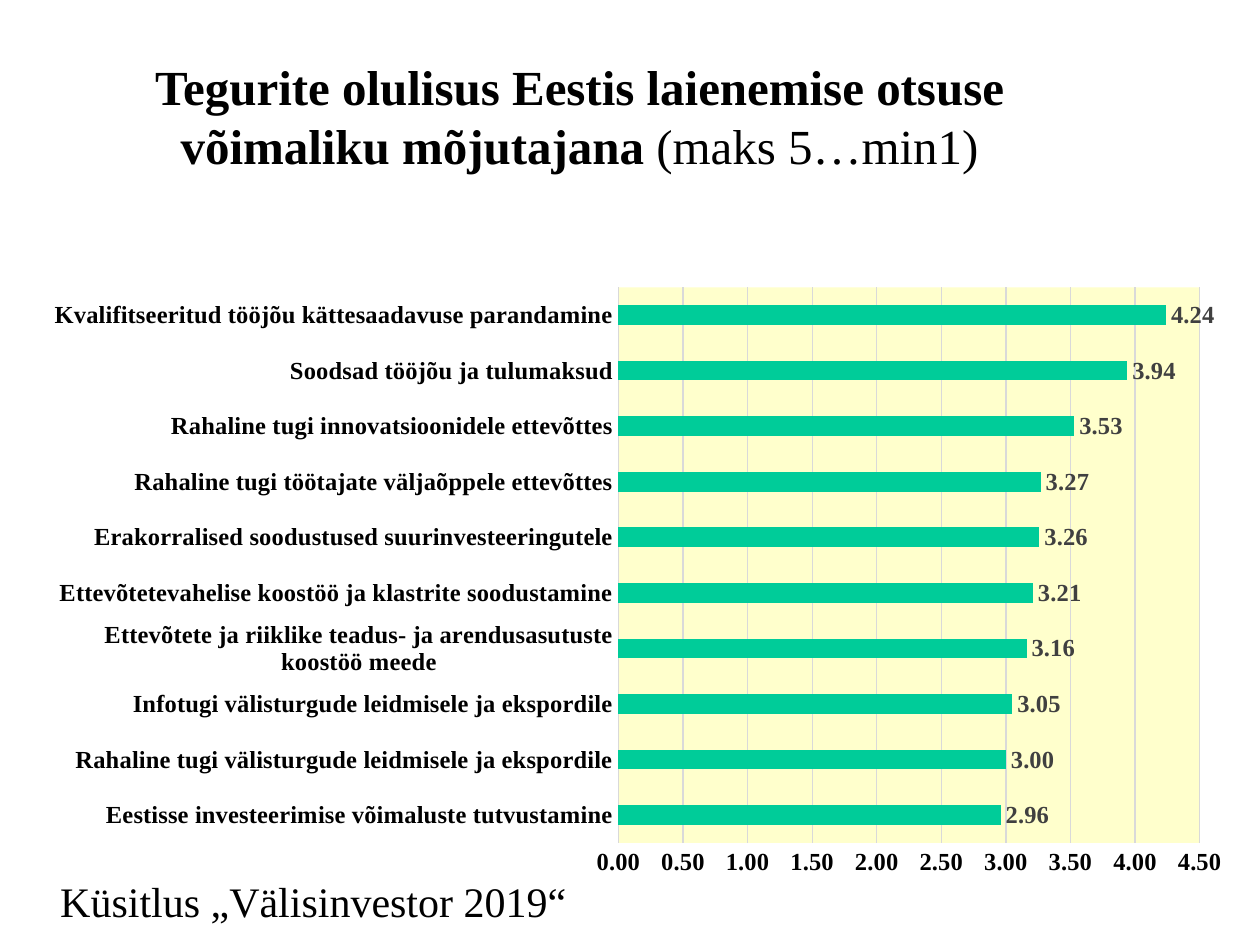
from lxml.etree import fromstring
from pptx import Presentation
from pptx.chart.data import CategoryChartData
from pptx.dml.color import RGBColor
from pptx.enum.chart import XL_CHART_TYPE, XL_LABEL_POSITION, XL_TICK_MARK
from pptx.enum.text import MSO_ANCHOR, PP_ALIGN
from pptx.oxml.ns import nsdecls, qn
from pptx.util import Inches, Pt

FONT = "Times New Roman"
COLORS = {"text": "000000", "label": "404040", "bar": "00CC99",
          "plot": "FFFFCC", "grid": "D9D9D9"}
FACTORS = [
    ("Eestisse investeerimise võimaluste tutvustamine", 2.96),
    ("Rahaline tugi välisturgude leidmisele ja ekspordile", 3.00),
    ("Infotugi välisturgude leidmisele ja ekspordile", 3.05),
    ("Ettevõtete ja riiklike teadus- ja arendusasutuste koostöö meede", 3.16),
    ("Ettevõtetevahelise koostöö ja klastrite soodustamine", 3.21),
    ("Erakorralised soodustused suurinvesteeringutele", 3.26),
    ("Rahaline tugi töötajate väljaõppele ettevõttes", 3.27),
    ("Rahaline tugi innovatsioonidele ettevõttes", 3.53),
    ("Soodsad tööjõu ja tulumaksud", 3.94),
    ("Kvalifitseeritud tööjõu kättesaadavuse parandamine", 4.24),
]


def color(name):
    return RGBColor.from_string(COLORS[name])


def set_font(font, size, bold=False, name="text"):
    font.name, font.size, font.bold = FONT, Pt(size), bold
    font.color.rgb = color(name)


def set_line(line):
    line.color.rgb = color("grid")
    line.width = Pt(0.75)


def add_text(slide, box, size, runs, wrap=True, align=PP_ALIGN.LEFT,
             anchor=MSO_ANCHOR.TOP):
    frame = slide.shapes.add_textbox(*map(Inches, box)).text_frame
    frame.word_wrap = wrap
    frame.vertical_anchor = anchor
    para = frame.paragraphs[0]
    para.alignment = align
    for text, bold in runs:
        run = para.add_run()
        run.text = text
        set_font(run.font, size, bold)


def style_plot(chart, x, y, w, h):
    area = chart._chartSpace.find(".//" + qn("c:plotArea"))
    for old in area.findall(qn("c:layout")):
        area.remove(old)
    rules = [("layoutTarget", "inner"), ("xMode", "edge"), ("yMode", "edge"),
             ("x", x), ("y", y), ("w", w), ("h", h)]
    marks = "".join(f'<c:{tag} val="{val}"/>' for tag, val in rules)
    area.insert(0, fromstring(
        f'<c:layout {nsdecls("c")}><c:manualLayout>{marks}</c:manualLayout></c:layout>'))
    area.append(fromstring(
        f'<c:spPr {nsdecls("c", "a")}><a:solidFill><a:srgbClr val="{COLORS["plot"]}"/>'
        '</a:solidFill><a:ln><a:noFill/></a:ln></c:spPr>'))


def style_axes(chart):
    cats, vals = chart.category_axis, chart.value_axis
    for axis in (cats, vals):
        axis.major_tick_mark = axis.minor_tick_mark = XL_TICK_MARK.NONE
        set_font(axis.tick_labels.font, 14, True)
    set_line(cats.format.line)
    vals.format.line.fill.background()
    vals.minimum_scale, vals.maximum_scale, vals.major_unit = 0, 4.5, 0.5
    vals.has_major_gridlines = True
    set_line(vals.major_gridlines.format.line)
    vals.tick_labels.number_format = "0.00"
    vals.tick_labels.number_format_is_linked = False


def style_bars(plot):
    plot.gap_width = 182
    plot.vary_by_categories = False
    fill = plot.series[0].format.fill
    fill.solid()
    fill.fore_color.rgb = color("bar")
    plot.has_data_labels = True
    labels = plot.data_labels
    labels.show_value = True
    labels.number_format = "0.00"
    labels.number_format_is_linked = False
    labels.position = XL_LABEL_POSITION.OUTSIDE_END
    set_font(labels.font, 14, True, "label")


def add_bars(slide, box):
    data = CategoryChartData(number_format="0.00")
    names, values = zip(*FACTORS)
    data.categories = names
    data.add_series("Series 1", values)
    chart = slide.shapes.add_chart(
        XL_CHART_TYPE.BAR_CLUSTERED, *map(Inches, box), data).chart
    chart.has_legend = chart.has_title = False
    set_font(chart.font, 10)
    style_axes(chart)
    style_bars(chart.plots[0])
    style_plot(chart, 0.49, 0.02, 0.48, 0.875)


def main():
    """Build the slide on the factors that weigh on growth in Estonia."""
    deck = Presentation()
    deck.slide_width, deck.slide_height = Inches(10), Inches(7.5)
    slide = deck.slides.add_slide(deck.slide_layouts[6])
    add_text(slide, (0.35, 0.29, 8.5, 1.25), 28,
             [("Tegurite olulisus Eestis laienemise otsuse võimaliku mõjutajana ", True),
              ("(maks 5…min1)", False)],
             align=PP_ALIGN.CENTER, anchor=MSO_ANCHOR.MIDDLE)
    add_bars(slide, (0.2, 2.18, 9.61, 5.04))
    add_text(slide, (0.38, 6.9, 4.26, 0.5), 24,
             [("Küsitlus „Välisinvestor 2019“", False)], wrap=False)
    deck.save("out.pptx")


if __name__ == "__main__":
    main()
